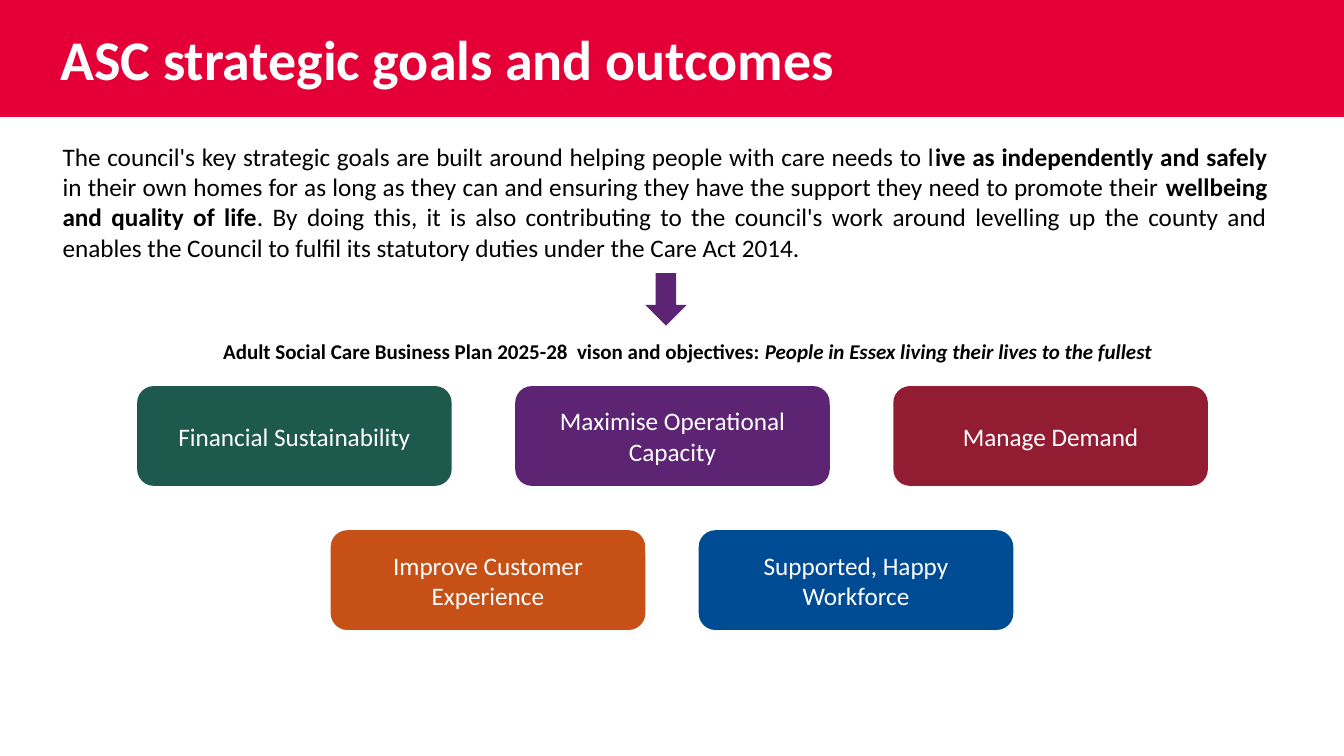
from pptx import Presentation
from pptx.dml.color import RGBColor
from pptx.enum import shapes, text
from pptx.util import Inches, Pt

RED = RGBColor(0xE4, 0x00, 0x37)
GREEN = RGBColor(0x1D, 0x59, 0x4C)
PURPLE = RGBColor(0x5C, 0x24, 0x72)
MAROON = RGBColor(0x92, 0x1D, 0x33)
ORANGE = RGBColor(0xC6, 0x50, 0x15)
BLUE = RGBColor(0x00, 0x4C, 0x94)
BLACK = RGBColor(0x00, 0x00, 0x00)
WHITE = RGBColor(0xFF, 0xFF, 0xFF)

SHAPE = shapes.MSO_SHAPE
ALIGN = text.PP_ALIGN

INTRO = [
    ("The council's key strategic goals are built around helping people with care needs to l", ""),
    ("ive as independently and safely", "b"),
    (" in their own homes for as long as they can and ensuring they have the support "
     "they need to promote their ", ""),
    ("wellbeing and quality of life", "b"),
    (". By doing this, it is also contributing to the council's work around levelling up "
     "the county and enables the Council to fulfil its statutory duties under the Care Act 2014.", ""),
]
VISION = [
    ("Adult Social Care Business Plan 2025-28  vison and objectives: ", "b"),
    ("People in Essex living their lives to the fullest", "bi"),
]

# Each row: top, left of first goal, step to the next goal, goals
GOAL_ROWS = [
    (3.83, 1.36, 3.75, [("Financial Sustainability", GREEN),
                        ("Maximise Operational Capacity", PURPLE),
                        ("Manage Demand", MAROON)]),
    (5.26, 3.28, 3.65, [("Improve Customer Experience", ORANGE),
                        ("Supported, Happy Workforce", BLUE)]),
]
GOAL_SIZE = (3.12, 0.99)


class Deck:
    font = "Calibri"

    def __init__(self, slide):
        self.slide = slide

    def letter(self, frame, parts, size, color, align):
        """Fill the first paragraph with (wording, style) parts; style letters are b and i."""
        frame.word_wrap = True
        para = frame.paragraphs[0]
        para.alignment = align
        for words, style in parts:
            run = para.add_run()
            run.text = words
            run.font.name = self.font
            run.font.size = Pt(size)
            run.font.color.rgb = color
            run.font.bold = "b" in style
            run.font.italic = "i" in style

    def label(self, box, parts, size, align):
        frame = self.slide.shapes.add_textbox(*map(Inches, box)).text_frame
        frame.margin_left = frame.margin_right = 0
        frame.margin_top = frame.margin_bottom = 0
        self.letter(frame, parts, size, BLACK, align)

    def block(self, kind, box, fill):
        shape = self.slide.shapes.add_shape(kind, *map(Inches, box))
        shape.shadow.inherit = False
        shape.fill.solid()
        shape.fill.fore_color.rgb = fill
        shape.line.fill.background()
        return shape

    def goal(self, left, top, words, fill):
        shape = self.block(SHAPE.ROUNDED_RECTANGLE, (left, top, *GOAL_SIZE), fill)
        shape.text_frame.vertical_anchor = text.MSO_ANCHOR.MIDDLE
        self.letter(shape.text_frame, [(words, "")], 18, WHITE, ALIGN.CENTER)

    def banner(self, box, words):
        frame = self.block(SHAPE.RECTANGLE, box, RED).text_frame
        frame.vertical_anchor = text.MSO_ANCHOR.MIDDLE
        frame.margin_left = Inches(0.6)
        self.letter(frame, [(words, "b")], 40, WHITE, ALIGN.LEFT)


def main():
    show = Presentation()
    show.slide_width, show.slide_height = Inches(13.33), Inches(7.5)
    deck = Deck(show.slides.add_slide(show.slide_layouts[6]))

    deck.banner((0, 0, 13.33, 1.16), "ASC strategic goals and outcomes")
    deck.label((0.62, 1.4, 11.95, 1.4), INTRO, 18, ALIGN.JUSTIFY)
    deck.block(SHAPE.DOWN_ARROW, (6.4, 2.71, 0.41, 0.52), PURPLE)
    deck.label((1.08, 3.36, 11.48, 0.4), VISION, 15, ALIGN.CENTER)
    for top, left, step, goals in GOAL_ROWS:
        for col, (words, fill) in enumerate(goals):
            deck.goal(left + col * step, top, words, fill)

    show.save("out.pptx")


if __name__ == "__main__":
    main()
